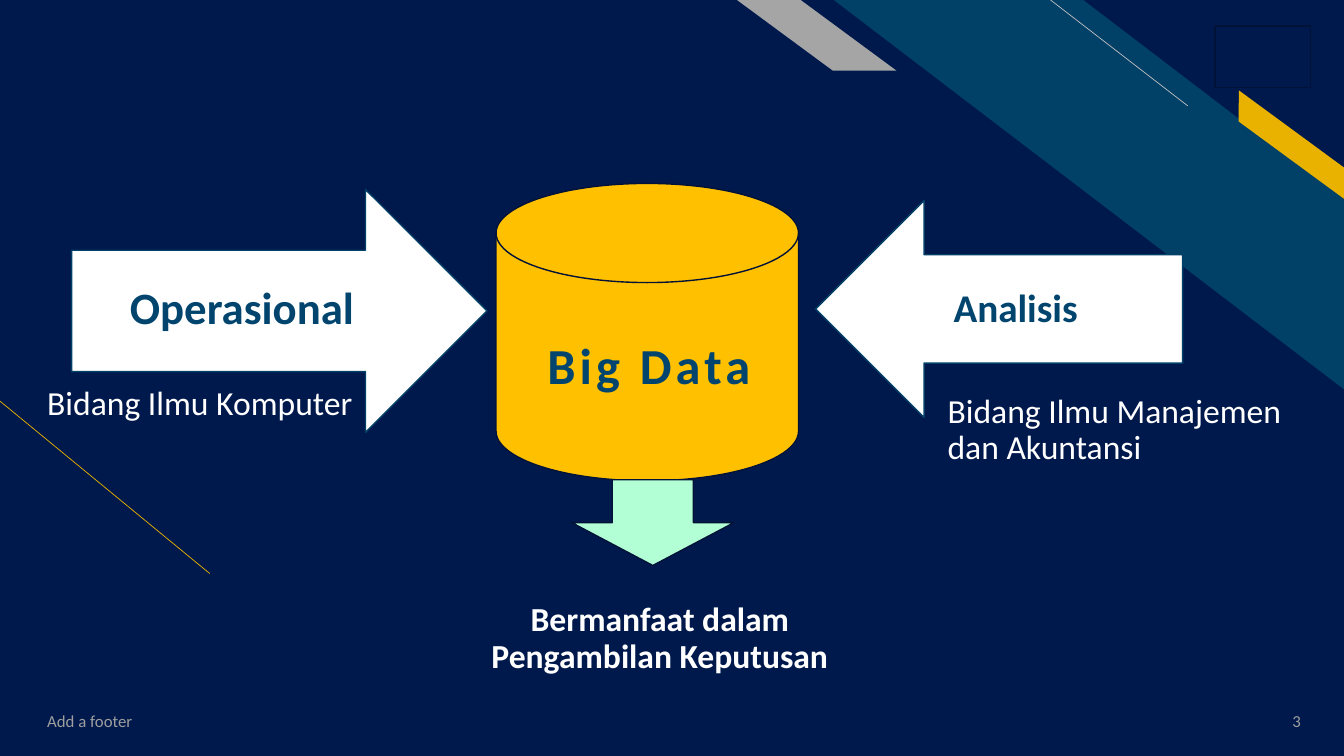
from lxml.etree import SubElement
from pptx import Presentation
from pptx.dml.color import RGBColor
from pptx.enum.shapes import MSO_CONNECTOR, MSO_SHAPE
from pptx.enum.text import MSO_ANCHOR, MSO_AUTO_SIZE, PP_ALIGN
from pptx.oxml.ns import qn
from pptx.util import Inches, Pt

NAVY = RGBColor(0x00, 0x19, 0x4C)
DARK_NAVY = RGBColor(0x00, 0x12, 0x38)
TEAL = RGBColor(0x01, 0x40, 0x67)
BLUE = RGBColor(0x01, 0x45, 0x6F)
GOLD = RGBColor(0xEA, 0xB2, 0x00)
AMBER = RGBColor(0xFF, 0xC0, 0x00)
MINT = RGBColor(0xB3, 0xFF, 0xD5)
WHITE = RGBColor(0xFF, 0xFF, 0xFF)
SILVER = RGBColor(0xBF, 0xBF, 0xBF)
GREY = RGBColor(0xA5, 0xA5, 0xA5)
FOOTER_GREY = RGBColor(0x9F, 0x9F, 0x9F)

COLUMNS, ROWS = 133.3, 75
CELL = Inches(0.1)

TITLE = "Bermanfaat dalam Pengambilan Keputusan"
TITLE_AREA = (47.3, 57.8, 36.3, 9.2)

RULES = [
    ((0, 39.8), (20.8, 56.9), GOLD),
    ((104.2, 0), (117.8, 10.5), SILVER),
]

STRIPES = [
    (MSO_SHAPE.DIAGONAL_STRIPE, (82.7, 0, 50.7, 38.7), 0.512, 0, TEAL),
    (MSO_SHAPE.PARALLELOGRAM, (120.7, 13.1, 14.8, 2.5), 0.72, 36.3, GOLD),
    (MSO_SHAPE.PARALLELOGRAM, (73.1, 0, 15.8, 7), 1.356, 0, GREY),
]

DIAGRAM = [
    (MSO_SHAPE.RIGHT_ARROW, (7.1, 18.8, 41.2, 24.1), WHITE, TEAL),
    (MSO_SHAPE.LEFT_ARROW, (80.9, 19.9, 36.4, 21.5), WHITE, TEAL),
    (MSO_SHAPE.FLOWCHART_MAGNETIC_DISK, (49.2, 18.2, 30, 29.5), AMBER, DARK_NAVY),
    (MSO_SHAPE.DOWN_ARROW, (56.7, 47.6, 16.1, 8.5), MINT, DARK_NAVY),
    (MSO_SHAPE.RECTANGLE, (120.5, 2.6, 9.5, 6.1), NAVY, DARK_NAVY),
]

HEADING = dict(color=BLUE, bold=True)
FOOTER = dict(size=12, color=FOOTER_GREY, anchor=MSO_ANCHOR.MIDDLE)
LABELS = [
    ("Bidang Ilmu Komputer", (3.7, 37.8, 33.9, 8.5), dict(line_spacing=0.9)),
    ("Bidang Ilmu Manajemen dan Akuntansi", (93, 38.6, 36.4, 8.5), dict(line_spacing=0.9)),
    ("Operasional", (11.9, 25.1, 24.8, 8.5),
     dict(HEADING, size=32, anchor=MSO_ANCHOR.BOTTOM)),
    ("Analisis", (93.6, 24.8, 18.7, 8.5),
     dict(HEADING, size=28, anchor=MSO_ANCHOR.BOTTOM)),
    ("Big Data", (53.3, 32.7, 24.3, 6.7), dict(HEADING, size=36, tracking=3)),
    ("Add a footer", (3.7, 69.5, 45, 4), FOOTER),
    ("3", (121.9, 69.5, 8.1, 4), dict(FOOTER, align=PP_ALIGN.RIGHT)),
]


def cells(*values):
    return [round(value * CELL) for value in values]


def write(shape, text, *, size=24, color=WHITE, bold=False, align=PP_ALIGN.LEFT,
          anchor=MSO_ANCHOR.TOP, line_spacing=1.0, tracking=0):
    frame = shape.text_frame
    frame.word_wrap = True
    frame.auto_size = MSO_AUTO_SIZE.NONE
    frame.vertical_anchor = anchor
    paragraph = frame.paragraphs[0]
    paragraph.alignment = align
    paragraph.line_spacing = line_spacing
    run = paragraph.add_run()
    run.text = text
    run.font.name = "Calibri"
    run.font.size = Pt(size)
    run.font.bold = bold
    run.font.color.rgb = color
    if tracking:
        run.font._element.set("spc", str(tracking * 100))


def add_figure(slide, kind, area, fill, outline=None):
    shape = slide.shapes.add_shape(kind, *cells(*area))
    shape.shadow.inherit = False
    shape.fill.solid()
    shape.fill.fore_color.rgb = fill
    if outline is None:
        shape.line.fill.background()
    else:
        shape.line.color.rgb = outline
        shape.line.width = Pt(1)
    return shape


def add_rule(slide, start, end, color):
    rule = slide.shapes.add_connector(MSO_CONNECTOR.STRAIGHT, *cells(*start, *end))
    rule.line.color.rgb = color
    rule.line.width = Pt(0.5)
    SubElement(rule._element.spPr, qn("a:effectLst"))


def main():
    presentation = Presentation()
    presentation.slide_width, presentation.slide_height = cells(COLUMNS, ROWS)
    slide = presentation.slides.add_slide(presentation.slide_layouts[5])
    slide.background.fill.solid()
    slide.background.fill.fore_color.rgb = NAVY

    for kind, area, slant, angle, color in STRIPES:
        stripe = add_figure(slide, kind, area, color)
        stripe.adjustments[0] = slant
        stripe.rotation = angle
        stripe._element.spPr.find(qn("a:xfrm")).set("flipH", "1")
    for start, end, color in RULES:
        add_rule(slide, start, end, color)
    for kind, area, fill, outline in DIAGRAM:
        add_figure(slide, kind, area, fill, outline)

    title = slide.shapes.title
    title.left, title.top, title.width, title.height = cells(*TITLE_AREA)
    write(title, TITLE, bold=True, align=PP_ALIGN.CENTER,
          anchor=MSO_ANCHOR.BOTTOM, line_spacing=0.9)
    title.text_frame.margin_bottom = 0
    for text, area, style in LABELS:
        write(slide.shapes.add_textbox(*cells(*area)), text, **style)

    presentation.save("out.pptx")


if __name__ == "__main__":
    main()
